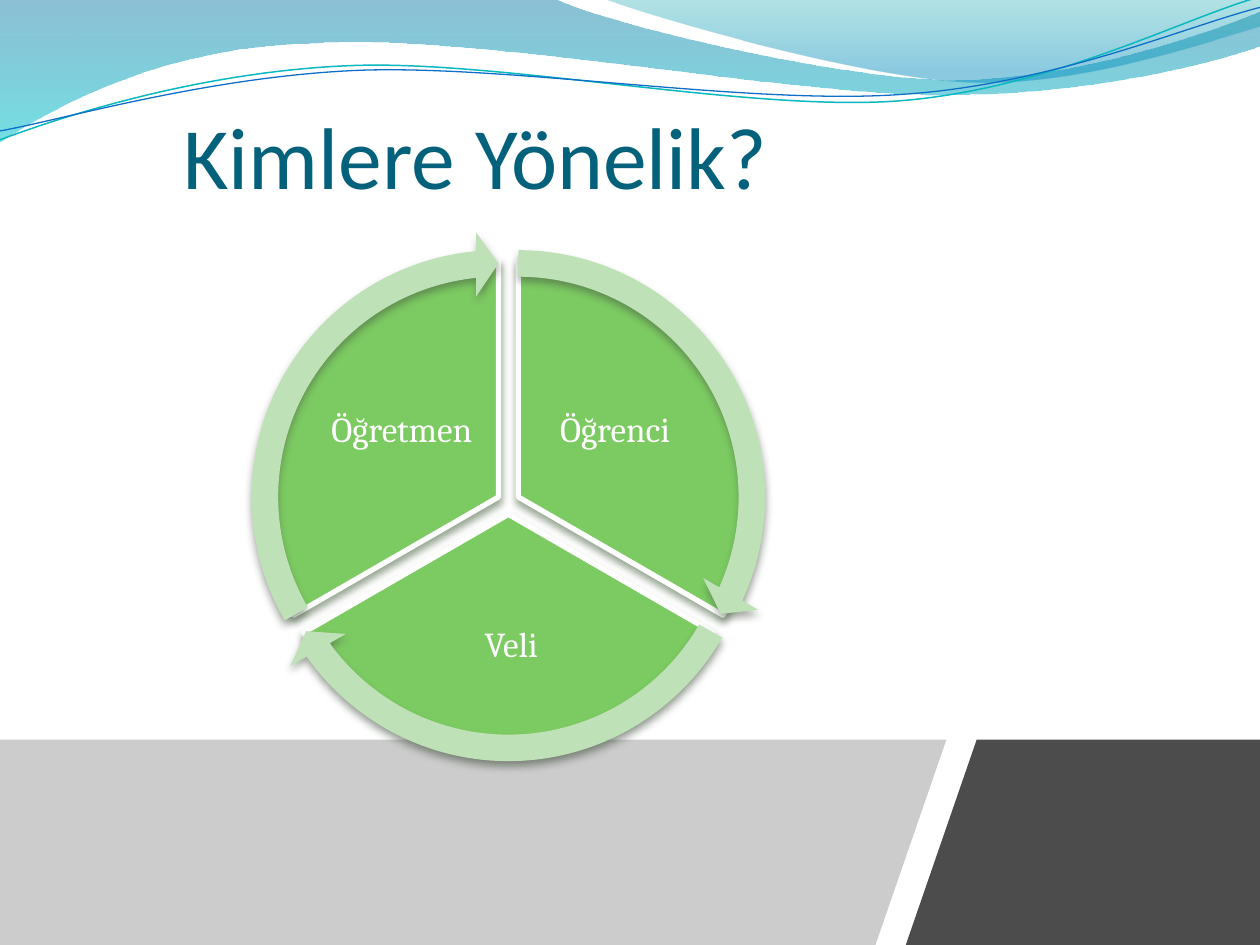
from lxml.etree import Element, SubElement
from pptx import Presentation
from pptx.dml.color import RGBColor
from pptx.enum.shapes import MSO_SHAPE
from pptx.enum.text import MSO_ANCHOR, PP_ALIGN
from pptx.oxml.ns import qn
from pptx.util import Cm, Pt

COLORS = {
    "title": "04617B", "sector": "7CCA62", "arrow": "BFE1B7", "white": "FFFFFF",
    "sector_shadow": "2B4821", "arrow_shadow": "434F40",
    "teal_line": "0AB8BF", "blue_line": "0F6FC6",
    "light_band": "808080", "dark_band": "000000",
    "wave_top": "0074A1", "wave_bottom": "00C6CF",
    "crest_top": "00A1A9", "crest_bottom": "008BBF",
}
RGB = {name: RGBColor.from_string(code) for name, code in COLORS.items()}

prs = Presentation()
prs.slide_width, prs.slide_height = Cm(25.4), Cm(19.05)
slide = prs.slides.add_slide(prs.slide_layouts[5])
shapes = slide.shapes


def trace(start, segments, close=True):
    """Draw an outline in cm; two numbers are a line, six a Bézier curve."""
    points = [(Cm(segment[i]), Cm(segment[i + 1]))
              for segment in segments for i in range(0, len(segment), 2)]
    builder = shapes.build_freeform(*map(Cm, start))
    builder.add_line_segments(points, close=close)
    outline = builder.convert_to_shape()
    outline.shadow.inherit = False
    steps = iter(list(outline._element.iter(qn("a:lnTo"))))
    for segment in segments:
        step = next(steps)
        if len(segment) == 6:
            curve = Element(qn("a:cubicBezTo"))
            step.addprevious(curve)
            for control in (step, next(steps), next(steps)):
                curve.append(control[0])
                control.getparent().remove(control)
    return outline


def set_opacity(element, percents):
    """Give the colours inside an element their opacities, in order."""
    for color, percent in zip(element.iter(qn("a:srgbClr")), percents):
        SubElement(color, qn("a:alpha"), val=str(percent * 1000))


# Header waves
waves = [
    ((0, 0),
     [(11.18, -0.03), (12.09, 0.43, 16.87, 1.6, 19.25, 1.6),
      (21.67, 1.6, 24.33, 0.66, 25.4, 0.23), (25.43, 0.91),
      (24.97, 1.12, 22.1, 1.93, 18.95, 1.91),
      (15.8, 1.91, 9.7, 0.71, 6.53, 0.86),
      (3.28, 0.91, 1.17, 2.11, -0.03, 2.87)],
     [("wave_top", 0), ("wave_bottom", 1)], (45, 55)),
    ((12.17, -0.03),
     [(12.93, 0.28, 17.32, 1.57, 19.53, 1.65),
      (21.74, 1.75, 24.41, 0.81, 25.4, 0.53), (25.4, 0)],
     [("crest_top", 0), ("crest_bottom", 0.8)], (30, 45)),
]
for start, segments, stops, opacities in waves:
    wave = trace(start, segments)
    wave.line.fill.background()
    wave.fill.gradient()
    wave.fill.gradient_angle = 270
    for stop, (color, position) in zip(wave.fill.gradient_stops, stops):
        stop.color.rgb = RGB[color]
        stop.position = position
    set_opacity(wave._element.spPr, opacities)

header_lines = [
    ("teal_line", 0.85, (-0.05, 2.22),
     [(1.19, 1.82, 4.02, 1.04, 7.05, 1.06),
      (10.05, 1.07, 15.02, 2.37, 18.08, 2.29),
      (21.13, 2.2, 23.86, 0.91, 25.4, 0.55)]),
    ("blue_line", 0.75, (-0.04, 2.04),
     [(1.16, 1.89, 4.17, 1.15, 7.2, 1.16),
      (10.25, 1.18, 15.13, 2.25, 18.19, 2.16),
      (21.22, 2.1, 23.93, 1.06, 25.45, 0.75)]),
]
for color, width, start, segments in header_lines:
    header_line = trace(start, segments, close=False)
    header_line.rotation = 357.3
    header_line.fill.background()
    header_line.line.color.rgb = RGB[color]
    header_line.line.width = Pt(width)

# Footer bands; the dark one is raised to the front at the end
bands = [
    ("light_band", 40, (0, 14.91), [(19.08, 14.91), (17.65, 19.05), (0, 19.05)]),
    ("dark_band", 70, (19.69, 14.91), [(25.4, 14.91), (25.4, 19.05), (18.26, 19.05)]),
]
for color, opacity, start, segments in bands:
    band = trace(start, segments)
    band.line.fill.background()
    band.fill.solid()
    band.fill.fore_color.rgb = RGB[color]
    set_opacity(band._element.spPr, [opacity])

# Title
title = shapes.title
title.left, title.top, title.width, title.height = Cm(3.7), Cm(1.12), Cm(16.08), Cm(3.05)
title.text_frame.text = "Kimlere Yönelik?"
title_format = {"margin_left": 0, "margin_right": 0, "margin_top": Cm(0.13),
                "margin_bottom": 0, "vertical_anchor": MSO_ANCHOR.BOTTOM,
                "word_wrap": True}
for name, value in title_format.items():
    setattr(title.text_frame, name, value)
title_paragraph = title.text_frame.paragraphs[0]
title_paragraph.alignment = PP_ALIGN.LEFT
title_font = title_paragraph.runs[0].font
title_font.name = "Calibri"
title_font.size = Pt(50)
title_font.color.rgb = RGB["title"]

# Cycle: label, centre, start and end angle, label box
audiences = [
    ("Öğrenci", (10.45, 10.02), 270, 30, (10.7, 7.28, 3.4, 2.84)),
    ("Veli", (10.25, 10.37), 30, 150, (7.75, 11.79, 5.11, 2.49)),
    ("Öğretmen", (10.05, 10.02), 150, 270, (6.4, 7.28, 3.4, 2.84)),
]
ANGLE_UNIT = 0.6  # adjustment value of one degree
HEAD_ANGLE = 3.28
label_format = {"margin_left": Cm(0.08), "margin_right": Cm(0.08),
                "margin_top": Cm(0.08), "margin_bottom": Cm(0.08),
                "vertical_anchor": MSO_ANCHOR.MIDDLE, "word_wrap": True}

for kind, preset, diameter in [("sector", MSO_SHAPE.PIE, 9.53),
                               ("arrow", MSO_SHAPE.CIRCULAR_ARROW, 10.7)]:
    for audience, (x, y), start, end, label_box in audiences:
        part = shapes.add_shape(preset, Cm(x - diameter / 2), Cm(y - diameter / 2),
                                Cm(diameter), Cm(diameter))
        begin, finish = start * ANGLE_UNIT, end * ANGLE_UNIT
        adjustments = ([begin, finish] if kind == "sector"
                       else [0.05, HEAD_ANGLE, finish - HEAD_ANGLE, begin, 0.06])
        for index, adjustment in enumerate(adjustments):
            part.adjustments[index] = adjustment
        part.fill.solid()
        part.fill.fore_color.rgb = RGB[kind]
        part.shadow.inherit = False
        effects = part._element.spPr.find(qn("a:effectLst"))
        shadow = SubElement(effects, qn("a:outerShdw"), blurRad=str(Pt(4.5)),
                            dist=str(Pt(3)), dir="5400000", rotWithShape="0")
        SubElement(shadow, qn("a:srgbClr"), val=COLORS[kind + "_shadow"])
        set_opacity(shadow, [48])
        if kind == "arrow":
            part.line.fill.background()
            continue
        part.line.color.rgb = RGB["white"]
        part.line.width = Pt(3)

        label = shapes.add_textbox(*map(Cm, label_box)).text_frame
        for name, value in label_format.items():
            setattr(label, name, value)
        label.text = audience
        paragraph = label.paragraphs[0]
        paragraph.alignment = PP_ALIGN.CENTER
        paragraph.line_spacing = 0.9
        label_font = paragraph.runs[0].font
        label_font.name = "Cambria"
        label_font.size = Pt(20)
        label_font.color.rgb = RGB["white"]

shapes._spTree.append(band._element)

prs.save("out.pptx")
